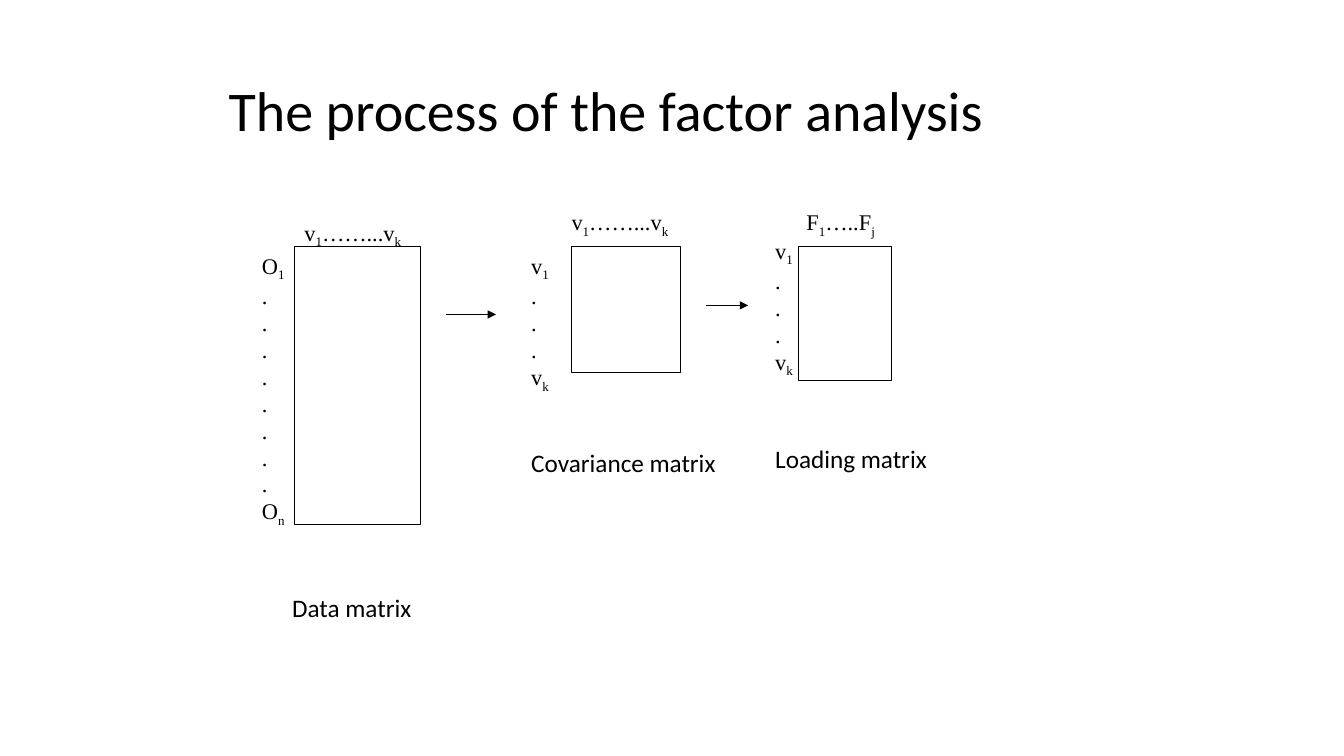
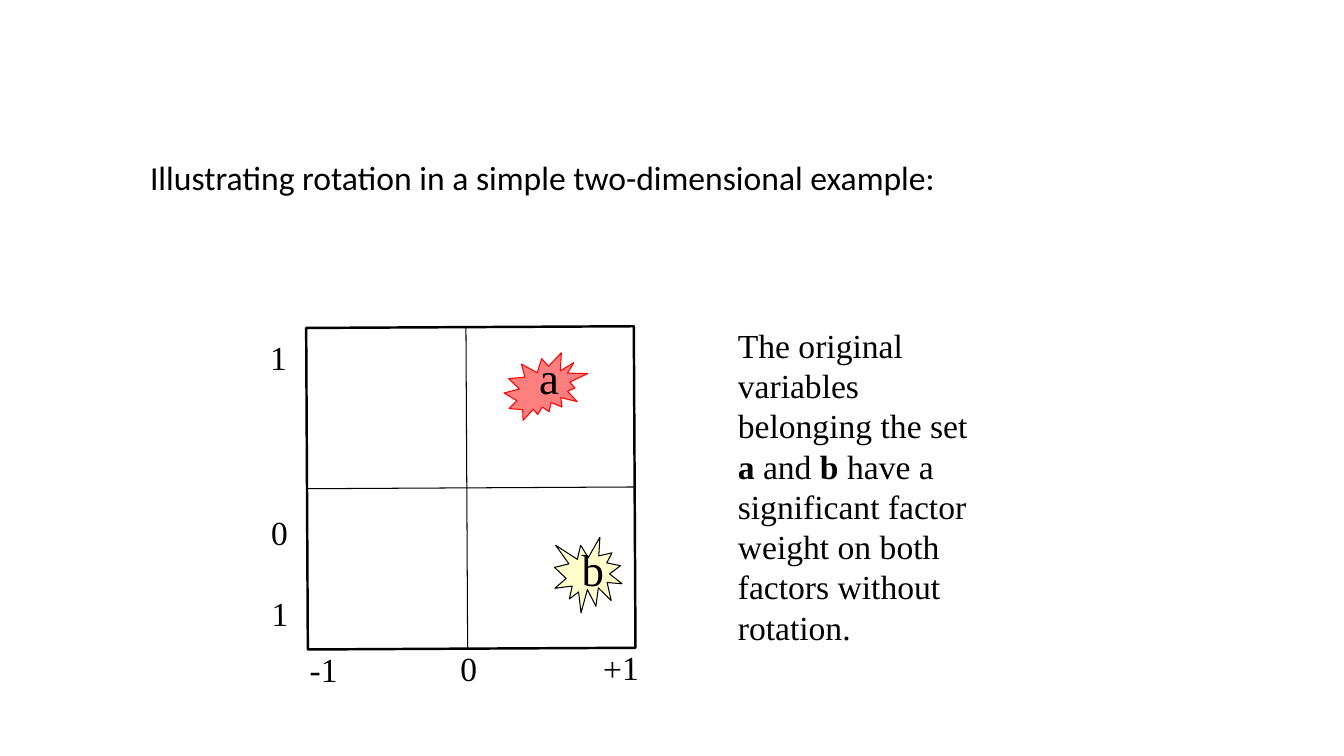
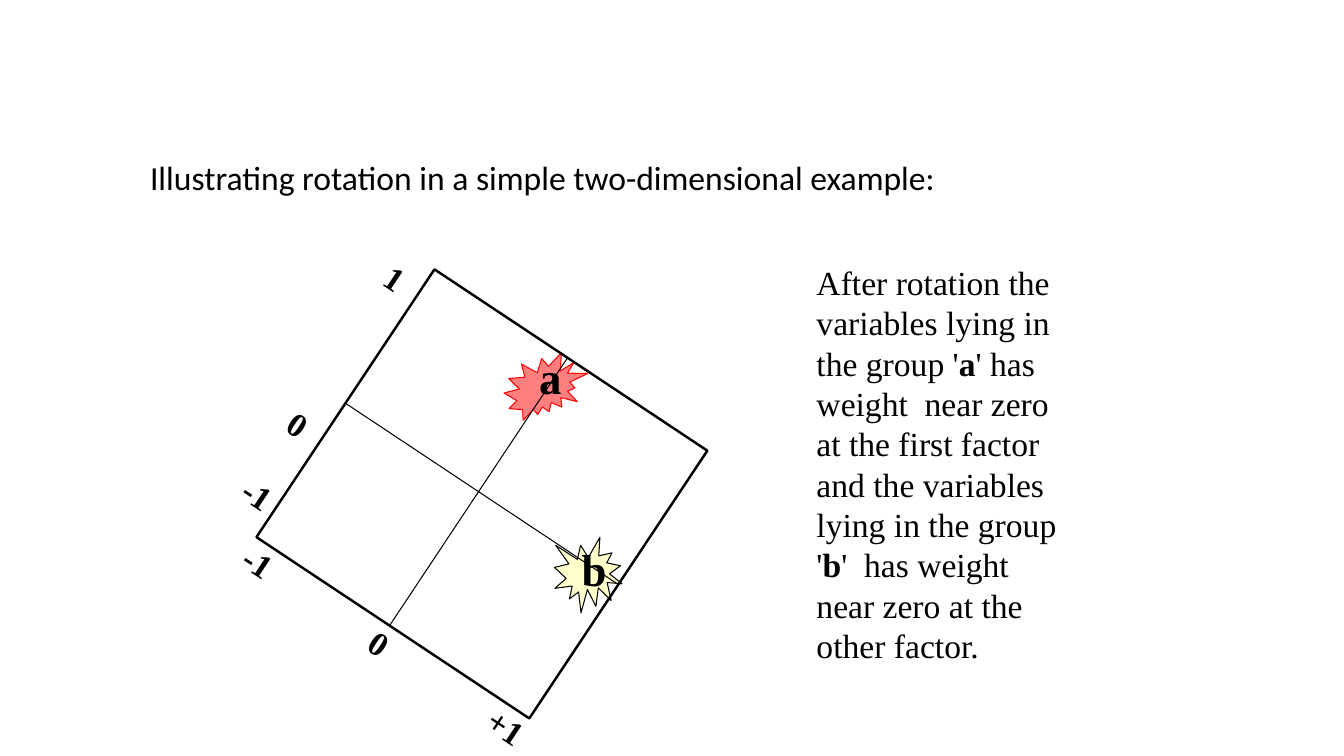
from math import cos, radians, sin

from lxml import etree
from pptx import Presentation
from pptx import util as u
from pptx.dml.color import RGBColor
from pptx.enum import shapes, text
from pptx.oxml.ns import qn

COLORS = {"ink": "000000", "paper": "FFFFFF", "red": "FF0000", "cream": "FFFFCC"}
SANS, SERIF = "Calibri", "Times New Roman"
AUTO = text.MSO_AUTO_SIZE

prs = Presentation()
prs.slide_width, prs.slide_height = u.Inches(13.33), u.Inches(7.5)
blank = prs.slide_layouts[6]


def add_text(s, box, lines, size, font=SERIF, bold=False, wrap=False):
    """Add a text box; _x_ marks a subscript and *x* marks bold."""
    sp = s.shapes.add_textbox(*map(u.Inches, box))
    tf = sp.text_frame
    tf.word_wrap, tf.auto_size = wrap, AUTO.SHAPE_TO_FIT_TEXT
    for n, line in enumerate(lines):
        p = tf.paragraphs[0] if n == 0 else tf.add_paragraph()
        mark = "*" if "*" in line else "_"
        for i, part in enumerate(line.split(mark)):
            if not part:
                continue
            r = p.add_run()
            r.text = part
            marked = i % 2 == 1
            look = {"name": font, "size": u.Pt(size), "bold": bold or (marked and mark == "*")}
            for key, value in look.items():
                setattr(r.font, key, value)
            r.font.color.rgb = RGBColor.from_string(COLORS["ink"])
            if marked and mark == "_":
                r._r.get_or_add_rPr().set("baseline", "-25000")
    return sp


def add_outline(s, kind, box, line="ink", fill=None, width=0.75):
    """Add a preset shape, or a straight line when kind is None."""
    lengths = map(u.Inches, box)
    if kind is None:
        sp = s.shapes.add_connector(shapes.MSO_CONNECTOR.STRAIGHT, *lengths)
        etree.SubElement(sp._element.spPr, qn("a:effectLst"))
    else:
        sp = s.shapes.add_shape(kind, *lengths)
        sp.shadow.inherit = False
        if fill:
            sp.fill.solid()
            sp.fill.fore_color.rgb = RGBColor.from_string(COLORS[fill])
        else:
            sp.fill.background()
    sp.line.color.rgb = RGBColor.from_string(COLORS[line])
    sp.line.width = u.Pt(width)
    return sp


KIND = shapes.MSO_SHAPE

# Slide 1: from data matrix to loading matrix
s = prs.slides.add_slide(blank)
add_text(s, (2.17, 0.7, 7.76, 0.77), ["The process of the factor analysis"], 40, SANS)

variables = "v_1_……...v_k_"
# rectangle, column header, row labels, caption
matrices = [
    ((2.92, 2.45, 1.25, 2.75), (2.92, 2.12, 1.19, 0.37), variables,
     (2.5, 2.45, 0.44, 3.17), ["O_1_"] + ["."] * 8 + ["O_n_"],
     (2.8, 5.83, 1.4, 0.4), "Data matrix"),
    ((5.67, 2.45, 1.08, 1.25), (5.57, 2.02, 1.19, 0.37), variables,
     (5.17, 2.45, 0.47, 1.44), ["v_1_"] + ["."] * 3 + ["v_k_"],
     (5.17, 4.39, 2.05, 0.4), "Covariance matrix"),
    ((7.92, 2.45, 0.92, 1.33), (7.9, 2.02, 0.9, 0.37), "F_1_…..F_j_",
     (7.59, 2.3, 0.39, 1.84), ["v_1_"] + ["."] * 3 + ["v_k_"],
     (7.59, 4.35, 1.72, 0.4), "Loading matrix"),
]
for rect, head_box, head, row_box, rows, caption_box, caption in matrices:
    add_outline(s, KIND.RECTANGLE, rect, fill="paper")
    add_text(s, head_box, [head], 16)
    add_text(s, row_box, rows, 16)
    add_text(s, caption_box, [caption], 18, SANS)

for x1, x2, y in [(4.42, 4.92, 3.12), (7, 7.42, 3.03)]:
    arrow = add_outline(s, None, (x1, y, x2, y))
    etree.SubElement(arrow.line._get_or_add_ln(), qn("a:tailEnd"), type="triangle")

# Slides 2 and 3: the same factor plane before and after rotation
HALF_W, HALF_H = 1.625, 1.595
plots = [
    {"center": (4.67, 4.84), "angle": -0.3, "bold": False, "low": "1", "low_x": -1.9,
     "note_box": (7.22, 3.17, 2.67, 3.33),
     "note": "The original variables belonging the set *a* and *b* have a significant "
             "factor weight on both factors without rotation."},
    {"center": (4.78, 4.9), "angle": 33.6, "bold": True, "low": "-1", "low_x": -1.85,
     "note_box": (8, 2.55, 2.67, 4.14),
     "note": "After rotation the variables lying in the group '*a*' has weight  near zero  "
             "at the first factor and the variables lying in the group '*b*'  has weight "
             "near zero at the other factor."},
]
for plot in plots:
    s = prs.slides.add_slide(blank)
    add_text(s, (1.39, 1.51, 8.06, 0.5),
             ["Illustrating rotation in a simple two-dimensional example:"], 24, SANS)

    # Variable groups
    add_outline(s, KIND.EXPLOSION1, (5.5, 5.33, 0.67, 0.75), fill="cream")
    burst = add_outline(s, KIND.EXPLOSION2, (5, 3.5, 0.83, 0.67), "red", "red")
    color = burst._element.spPr.find(qn("a:solidFill"))[0]
    etree.SubElement(color, qn("a:alpha"), val="50000")

    # Plane and its axes, turned about the centre
    cx, cy = plot["center"]
    c, d = cos(radians(plot["angle"])), sin(radians(plot["angle"]))
    plane = add_outline(s, KIND.RECTANGLE,
                        (cx - HALF_W, cy - HALF_H, 2 * HALF_W, 2 * HALF_H), width=1.75)
    plane.rotation = plot["angle"]
    for ends in [((-0.04, -HALF_H), (-0.04, HALF_H)), ((-HALF_W, 0), (HALF_W, 0))]:
        add_outline(s, None, [v for x, y in ends
                              for v in (cx + x * c - y * d, cy + x * d + y * c)])

    # Axis labels, placed in the plane's own coordinates
    labels = [("1", -1.9, -1.31), ("0", -1.9, 0.43), (plot["low"], plot["low_x"], 1.23),
              ("-1", -1.47, 1.79), ("0", -0.03, 1.79), ("+1", 1.48, 1.79)]
    for label, x, y in labels:
        lx, ly = cx + x * c - y * d, cy + x * d + y * c
        sp = add_text(s, (lx - 0.25, ly - 0.2, 0.5, 0.4), [label], 24,
                      bold=plot["bold"], wrap=True)
        sp.rotation = plot["angle"]
        tf = sp.text_frame
        layout = {"margin_left": 0, "margin_right": 0, "margin_top": 0, "margin_bottom": 0,
                  "auto_size": AUTO.NONE, "vertical_anchor": text.MSO_ANCHOR.MIDDLE}
        for key, value in layout.items():
            setattr(tf, key, value)
        tf.paragraphs[0].alignment = text.PP_ALIGN.CENTER

    # Group names and explanation
    for name, box in [("a", (5.25, 3.42, 0.5, 0.63)), ("b", (5.67, 5.33, 0.58, 0.63))]:
        add_text(s, box, [name], 32, bold=plot["bold"], wrap=True)
    add_text(s, plot["note_box"], [plot["note"]], 24, wrap=True)

prs.save("out.pptx")
